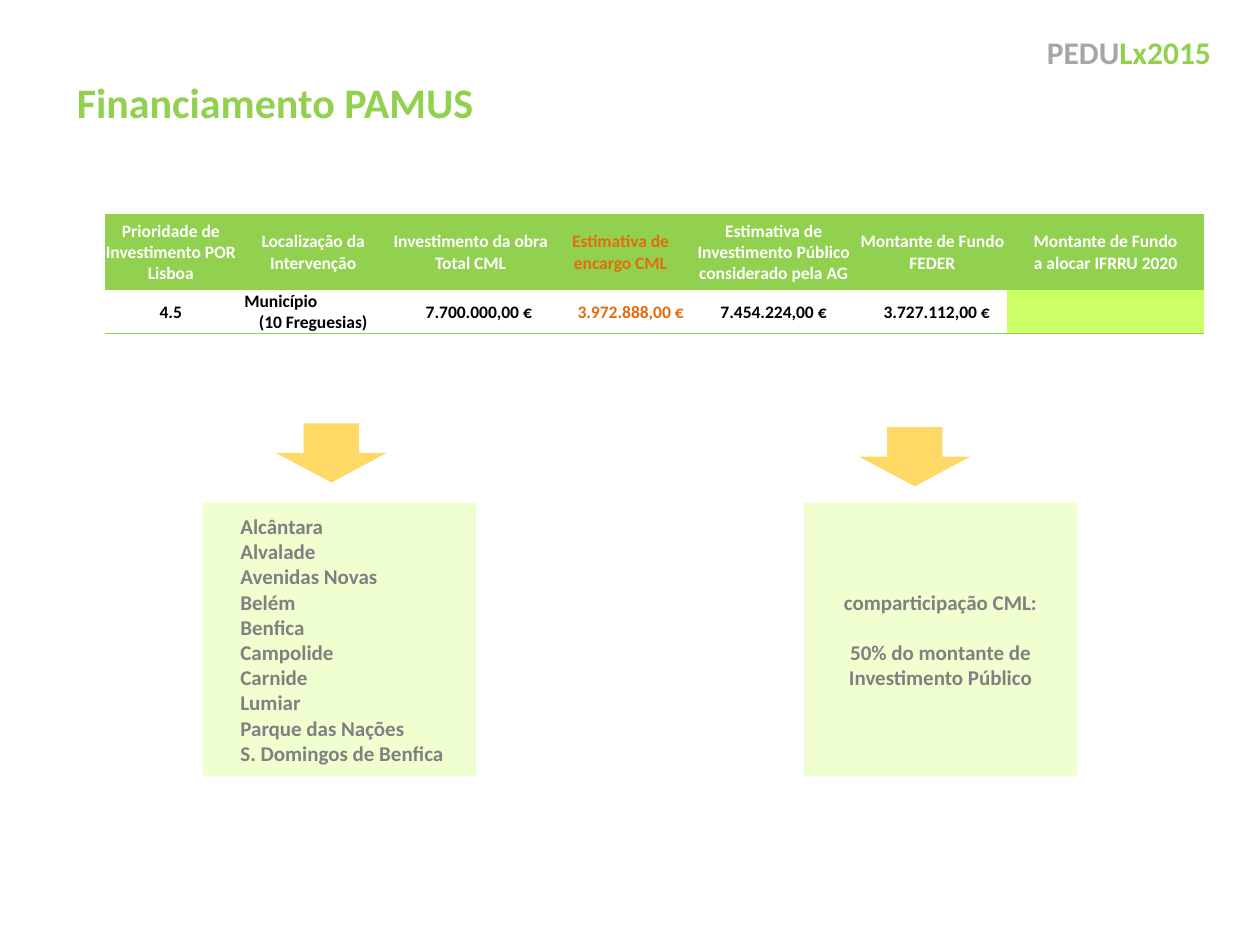
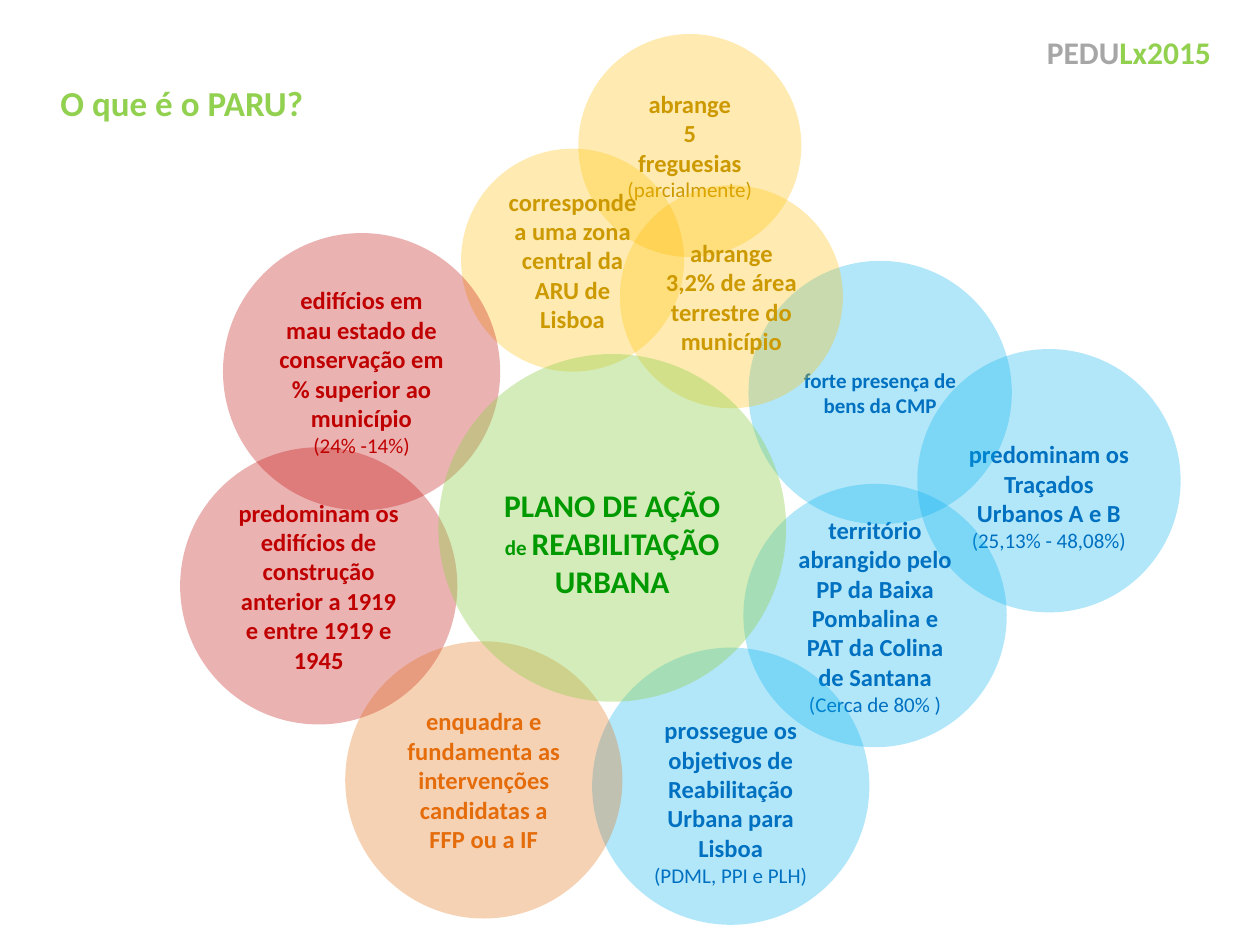
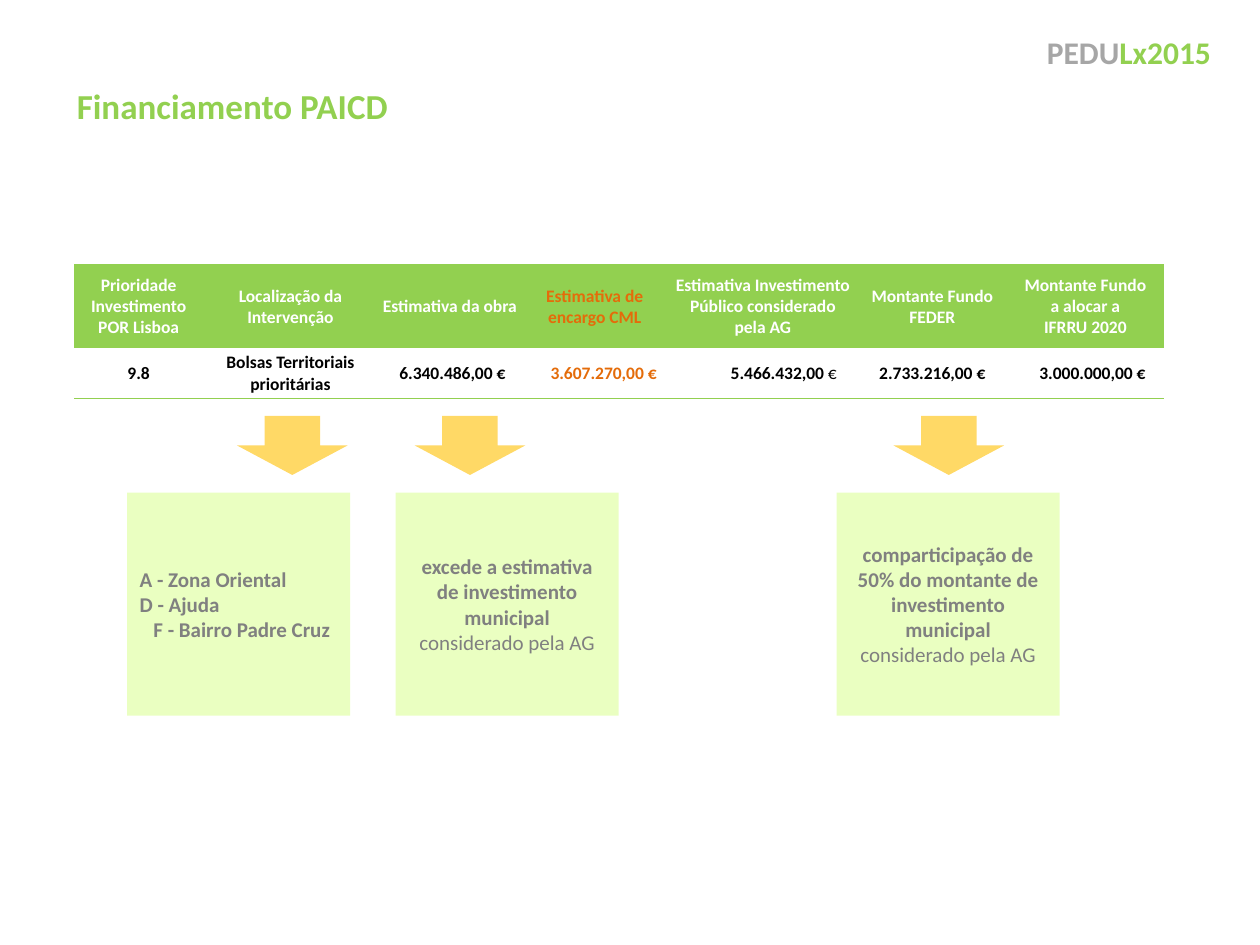
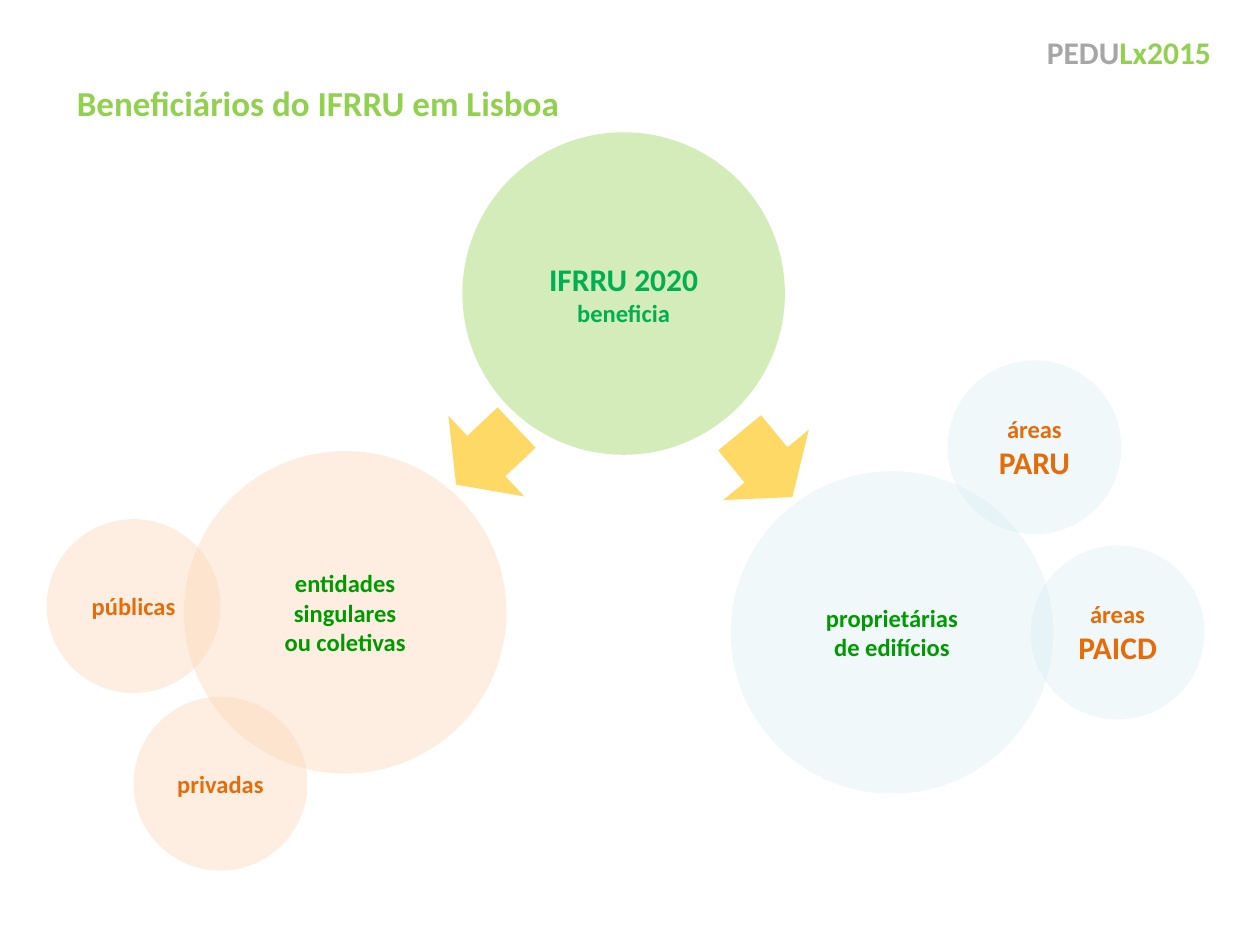
from pptx import Presentation
from pptx.dml.color import RGBColor
from pptx.enum.shapes import MSO_SHAPE
from pptx.enum.text import MSO_ANCHOR, MSO_AUTO_SIZE, PP_ALIGN
from pptx.oxml.ns import qn
from pptx.util import Inches, Pt
from lxml.etree import SubElement, Element

# Shared colours and names
GREEN, LIME, AMBER = "92D050", "CCFF66", "FFC000"
GOLD, RED, ORANGE = "CC9900", "C00000", "E46C0A"
SKY, BLUE, DARK = "00B0F0", "0070C0", "009900"
PEACH, ICE, GREY = "FCD5B5", "DBEEF4", "808080"
WHITE, BLACK = "FFFFFF", "000000"
LEFT, MID = PP_ALIGN.LEFT, PP_ALIGN.CENTER
RECT, OVAL, DOWN = MSO_SHAPE.RECTANGLE, MSO_SHAPE.OVAL, MSO_SHAPE.DOWN_ARROW
PLAIN = "{2D5ABB26-0587-4C30-8999-92F81FD0307C}"
rgb = RGBColor.from_string


def write(frame, paras, size, color, align=MID):
    """A paragraph is a string, a list of (text, size, bold) runs,
    or a dict that adds align, left or before to its runs."""
    frame.word_wrap = True
    for n, para in enumerate(paras):
        spec = para if isinstance(para, dict) else {"runs": para}
        runs = spec["runs"]
        if isinstance(runs, str):
            runs = [(runs, size, True)]
        p = frame.add_paragraph() if n else frame.paragraphs[0]
        p.alignment = spec.get("align", align)
        if "left" in spec:
            p._p.get_or_add_pPr().set("marL", str(Inches(spec["left"])))
        if "before" in spec:
            p.space_before = Pt(spec["before"])
        p.font.name, p.font.size, p.font.bold = "Calibri", Pt(size), True
        p.font.color.rgb = rgb(color)
        for text, pts, bold in runs:
            for i, line in enumerate(text.split("\n")):
                if i:
                    p.add_line_break()
                run = p.add_run()
                run.text = line
                if pts != size:
                    run.font.size = Pt(pts)
                if not bold:
                    run.font.bold = False


def draw(slide, kind, left, top, wide, high, fill, alpha):
    shape = slide.shapes.add_shape(
        kind, Inches(left), Inches(top), Inches(wide), Inches(high))
    shape.shadow.inherit = False
    shape.line.fill.background()
    shape.fill.solid()
    shape.fill.fore_color.rgb = rgb(fill)
    tone = next(shape.element.iter(qn("a:srgbClr")))
    SubElement(tone, qn("a:alpha")).set("val", str(alpha * 1000))
    shape.text_frame.vertical_anchor = MSO_ANCHOR.MIDDLE
    return shape


deck = Presentation()
deck.slide_width, deck.slide_height = Inches(10), Inches(7.5)
layout = deck.slide_layouts[5]

# Titles
titles = [
    ("Financiamento PAMUS", 0.51, 0.56, 6.85, 0.5, 24),
    ("O que é o PARU?", 0.38, 0.6, 8.9, 0.44, 20),
    ("Financiamento PAICD", 0.51, 0.62, 2.78, 0.44, 20),
    ("Beneficiários do IFRRU em Lisboa", 0.51, 0.6, 4.26, 0.44, 20),
]
slides = []
for text, left, top, wide, high, size in titles:
    slide = deck.slides.add_slide(layout)
    title = slide.shapes.title
    title.left, title.top = Inches(left), Inches(top)
    title.width, title.height = Inches(wide), Inches(high)
    title.text_frame.auto_size = MSO_AUTO_SIZE.NONE
    title.text_frame.vertical_anchor = MSO_ANCHOR.TOP
    write(title.text_frame, [text], size, GREEN, LEFT)
    slides.append(slide)
pamus, paru, paicd, ifrru = slides

# Header, moved to the layout so that every slide shows it
head = pamus.shapes.add_textbox(
    Inches(7.9), Inches(0.21), Inches(1.81), Inches(0.71))
write(head.text_frame, [[("PEDU", 18, True), ("Lx2015", 18, True)]],
      18, "A6A6A6", PP_ALIGN.RIGHT)
head.text_frame.paragraphs[0].runs[1].font.color.rgb = rgb(GREEN)
next(head.element.iter(qn("p:cNvPr"))).set("id", "20")
layout.shapes.element.append(head.element)

# Funding tables: slide, left, top, column widths, row heights, cells
tables = [
    (pamus, 0.83, 1.7, [1.05, 1.21, 1.29, 1.09, 1.34, 1.18, 1.57], [0.6, 0.34], [
        [["Prioridade de Investimento POR Lisboa"],
         ["Localização da Intervenção"],
         ["Investimento da obra", "Total CML"],
         ["Estimativa de encargo CML"],
         ["Estimativa de Investimento Público considerado pela AG"],
         ["Montante de Fundo FEDER"],
         ["Montante de Fundo\na alocar IFRRU 2020"]],
        [["4.5"],
         [{"runs": "Município", "align": LEFT, "left": 0.05},
          "(10 Freguesias)"],
         [{"runs": "7.700.000,00 €", "left": 0.13}],
         [{"runs": "3.972.888,00 €", "left": 0.16}],
         ["7.454.224,00 €"],
         [{"runs": "3.727.112,00 €", "left": 0.07}],
         []],
    ]),
    (paicd, 0.59, 2.1, [1.02, 1.39, 1.14, 1.16, 1.51, 1.18, 1.25], [0.66, 0.4], [
        [["Prioridade Investimento POR Lisboa"],
         ["Localização da Intervenção"],
         ["Estimativa da obra"],
         ["Estimativa de encargo CML"],
         ["Estimativa Investimento Público considerado", "pela AG"],
         ["Montante Fundo FEDER"],
         ["Montante Fundo\na alocar a\nIFRRU 2020"]],
        [["9.8"],
         ["Bolsas Territoriais prioritárias"],
         [{"runs": "6.340.486,00 €", "align": LEFT, "left": 0.16}],
         [{"runs": "3.607.270,00 €", "align": LEFT, "left": 0.22}],
         [{"runs": [("5.466.432,00 ", 10, True), ("€", 10, False)],
           "align": LEFT, "left": 0.49}],
         ["2.733.216,00 €"],
         [{"runs": "3.000.000,00 €", "align": LEFT, "left": 0.25}]],
    ]),
]
for slide, left, top, cols, rows, cells in tables:
    frame = slide.shapes.add_table(
        2, len(cols), Inches(left), Inches(top),
        Inches(sum(cols)), Inches(sum(rows)))
    next(frame.element.iter(qn("a:tableStyleId"))).text = PLAIN
    grid = frame.table
    for c, wide in enumerate(cols):
        grid.columns[c].width = Inches(wide)
    for r, high in enumerate(rows):
        grid.rows[r].height = Inches(high)
        for c, paras in enumerate(cells[r]):
            cell = grid.cell(r, c)
            cell.vertical_anchor = MSO_ANCHOR.MIDDLE
            cell.margin_left = cell.margin_right = Inches(0.01)
            cell.margin_top, cell.margin_bottom = Inches(0.01), 0
            color = ORANGE if c == 3 else BLACK if r else WHITE
            write(cell.text_frame, paras, 10, color)
            if r and paras:
                cell.fill.background()
            else:
                cell.fill.solid()
                cell.fill.fore_color.rgb = rgb(LIME if r else GREEN)
            # Outer rule: above the head row, below the last row
            edge = Element(qn("a:lnB" if r else "a:lnT"), w=str(Pt(0.5)))
            ink = SubElement(edge, qn("a:solidFill"))
            SubElement(ink, qn("a:srgbClr")).set("val", GREEN)
            cell._tc.get_or_add_tcPr().insert(0, edge)

# Note boxes: slide, left, top, side, alpha, align, paragraphs
towns = ["Alcântara", "Alvalade", "Avenidas Novas", "Belém", "Benfica",
         "Campolide", "Carnide", "Lumiar", "Parque das Nações",
         "S. Domingos de Benfica"]
basis = [("considerado pela AG", 12, False)]
notes = [
    (pamus, 1.61, 3.99, 2.17, 30, LEFT,
     [{"runs": town, "left": 0.2} for town in towns]),
    (pamus, 6.38, 3.99, 2.17, 30, MID,
     ["comparticipação CML:",
      {"runs": "50% do montante de", "before": 14.4},
      "Investimento Público"]),
    (paicd, 3.14, 3.91, 1.77, 40, MID,
     ["excede a estimativa", "de investimento municipal", basis]),
    (paicd, 1.01, 3.91, 1.77, 40, LEFT,
     ["A - Zona Oriental", "D - Ajuda",
      {"runs": "F - Bairro Padre Cruz", "left": 0.11}]),
    (paicd, 6.64, 3.91, 1.77, 40, MID,
     ["comparticipação de", "50% do montante de",
      "investimento municipal", basis]),
]
for slide, left, top, side, alpha, align, paras in notes:
    box = draw(slide, RECT, left, top, side, side, LIME, alpha)
    write(box.text_frame, paras, 12, GREY, align)

# Circles: slide, left, top, size, fill, alpha, text colour, text size,
# extra top margin, paragraphs
rings = [
    (paru, 4.59, 0.27, 1.77, AMBER, 30, GOLD, 14, 0,
     [[("abrange\n5\nfreguesias ", 14, True), ("(parcialmente)", 12, False)]]),
    (paru, 3.66, 1.18, 1.77, AMBER, 30, GOLD, 14, 0,
     ["corresponde a uma zona central da ARU de Lisboa"]),
    (paru, 7.28, 2.77, 2.09, SKY, 30, BLUE, 14, 0.24,
     [[("predominam os Traçados Urbanos A e B ", 14, True),
       ("(25,13% - 48,08%)", 12, False)]]),
    (paru, 5.9, 3.84, 2.09, SKY, 30, BLUE, 14, 0,
     [[("território abrangido pelo PP da Baixa Pombalina e "
        "PAT da Colina de Santana ", 14, True),
       ("(Cerca de 80% )", 12, False)]]),
    (paru, 5.94, 2.07, 2.09, SKY, 30, BLUE, 12, 0,
     ["forte presença de bens da CMP"]),
    (paru, 1.43, 3.55, 2.2, RED, 30, RED, 14, 0,
     ["predominam os edifícios de construção anterior a 1919 "
      "e entre 1919 e 1945"]),
    (paru, 1.77, 1.85, 2.2, RED, 30, RED, 14, 0,
     ["edifícios em mau estado de conservação em % superior ao município",
      [("(24% -14%)", 12, False)]]),
    (paru, 4.7, 5.14, 2.2, SKY, 30, BLUE, 14, 0.24,
     ["prossegue os objetivos de Reabilitação Urbana para Lisboa",
      [("(PDML, PPI e PLH)", 12, False)]]),
    (paru, 2.74, 5.09, 2.2, ORANGE, 30, ORANGE, 14, 0,
     ["enquadra e fundamenta as intervenções candidatas a", "FFP ou a IF"]),
    (paru, 4.92, 1.47, 1.77, AMBER, 30, GOLD, 14, 0,
     ["abrange 3,2% de área terrestre do município"]),
    (paru, 3.48, 2.81, 2.76, GREEN, 40, DARK, 18, 0.24,
     ["PLANO DE AÇÃO",
      [("de ", 12, True), ("REABILITAÇÃO URBANA", 18, True)]]),
    (ifrru, 1.46, 3.58, 2.56, PEACH, 40, DARK, 14, 0,
     ["entidades singulares", "ou coletivas"]),
    (ifrru, 5.8, 3.74, 2.56, ICE, 40, DARK, 14, 0,
     ["proprietárias", "de edifícios"]),
    (ifrru, 0.37, 4.12, 1.38, PEACH, 40, ORANGE, 14, 0, ["públicas"]),
    (ifrru, 1.06, 5.53, 1.38, PEACH, 40, ORANGE, 14, 0, ["privadas"]),
    (ifrru, 7.52, 2.86, 1.38, ICE, 40, ORANGE, 14, 0,
     [[("áreas ", 14, True), ("PARU", 18, True)]]),
    (ifrru, 8.18, 4.33, 1.38, ICE, 40, ORANGE, 14, 0,
     [[("áreas ", 14, True), ("PAICD", 18, True)]]),
    (ifrru, 3.67, 1.05, 2.56, GREEN, 40, "00B050", 18, 0,
     [[("IFRRU 2020 ", 18, True), ("beneficia", 14, True)]]),
]
for slide, left, top, side, fill, alpha, color, size, drop, paras in rings:
    ring = draw(slide, OVAL, left, top, side, side, fill, alpha)
    ring.text_frame.margin_top = Inches(0.05 + drop)
    write(ring.text_frame, paras, size, color)

# Arrows: slide, left, top, height, rotation
arrows = [
    (pamus, 2.19, 3.36, 0.47, 0),
    (pamus, 6.82, 3.39, 0.47, 0),
    (paicd, 1.88, 3.3, 0.47, 0),
    (paicd, 7.09, 3.3, 0.47, 0),
    (paicd, 3.29, 3.3, 0.47, 0),
    (ifrru, 3.42, 3.29, 0.66, 46.7),
    (ifrru, 5.64, 3.36, 0.66, 320.6),
]
for slide, left, top, high, turn in arrows:
    draw(slide, DOWN, left, top, 0.88, high, AMBER, 60).rotation = turn

deck.save("out.pptx")
